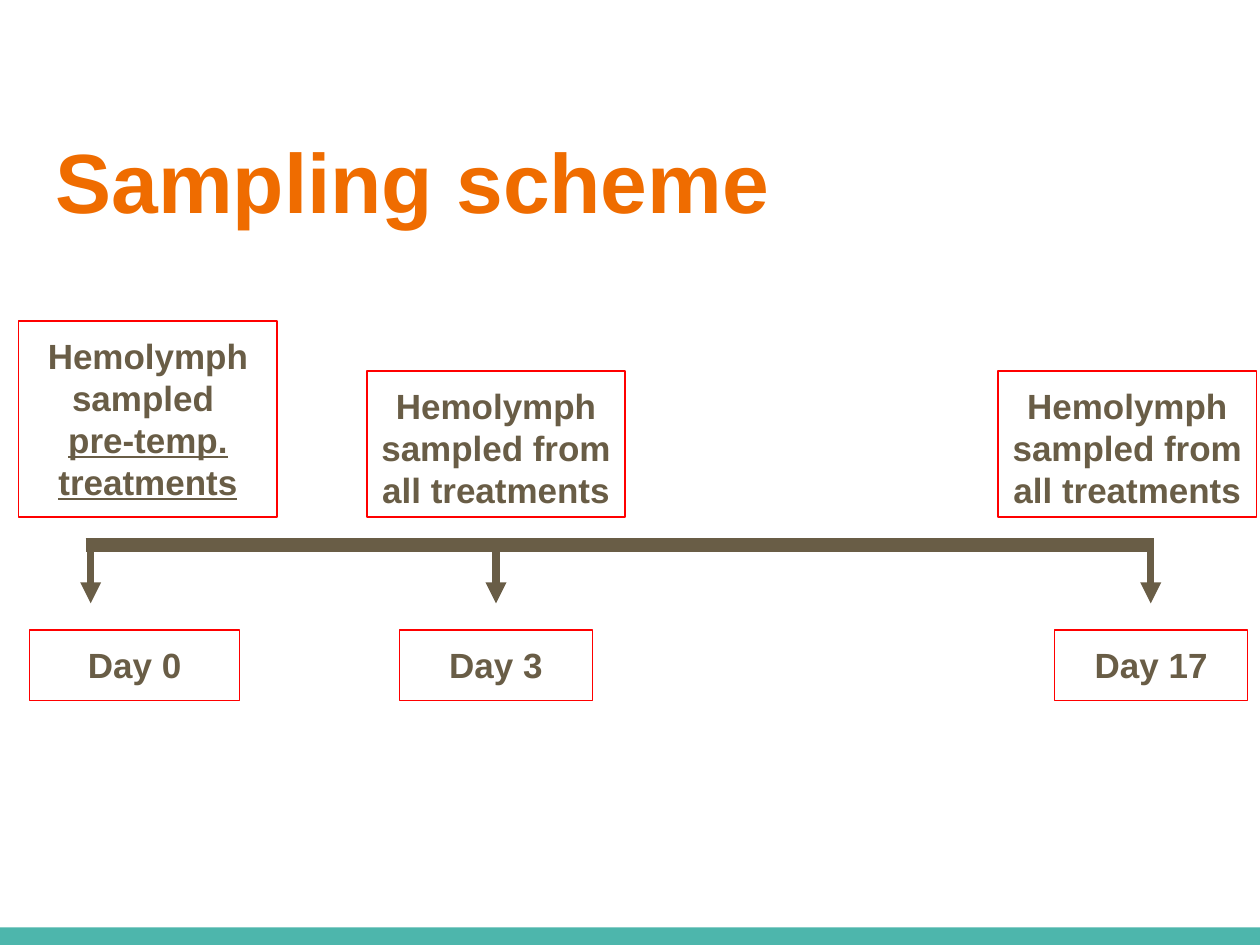
import pptx
import pptx.dml.color
import pptx.enum.shapes
import pptx.enum.text
import pptx.oxml.ns
import pptx.util
from lxml import etree

WIDE = pptx.util.Inches(7.5)
HIGH = WIDE * 3 // 4
HUES = {"title": "EF6C00", "text": "695D46", "edge": "FF0000", "band": "4DB6AC"}
FLOOR, AXIS, TIP = 54.75, 57.65, 63.85
ALL = [("Hemolymph sampled from all treatments", False)]
FIRST = [("Hemolymph sampled ", False), ("pre-temp. treatments", True)]
STOPS = [
    {"day": "Day 0", "mark": 7.2, "tag": (2.35, 16.67), "note": (1.47, 20.8), "lines": FIRST},
    {"day": "Day 3", "mark": 39.37, "tag": (31.7, 15.33), "note": (29.1, 15.5), "lines": ALL},
    {"day": "Day 17", "mark": 91.33, "tag": (83.7, 15.33), "note": (79.2, 15.5), "lines": ALL},
]


def hue(name):
    """Return a named colour."""
    return pptx.dml.color.RGBColor.from_string(HUES[name])


def across(share):
    """Turn a percentage of the slide's width into a length."""
    return round(WIDE * share / 100)


def down(share):
    """Turn a percentage of the slide's height into a length."""
    return round(HIGH * share / 100)


def area(left, top, width, height):
    """Return a rectangle given in percentages as lengths."""
    return across(left), down(top), across(width), down(height)


def style(para, size, name):
    """Set the font of a paragraph."""
    font = para.font
    font.name, font.size, font.bold = "Arial", pptx.util.Pt(size), True
    font.color.rgb = hue(name)


def inset(frame):
    """Set the margins of a text frame and hang its text from the top."""
    side = pptx.util.Inches(0.07)
    frame.margin_left = frame.margin_right = frame.margin_bottom = side
    frame.margin_top = pptx.util.Inches(0.08)
    frame.vertical_anchor = pptx.enum.text.MSO_ANCHOR.TOP
    frame.word_wrap = True


def block(slide, place):
    """Add a plain rectangle."""
    shape = slide.shapes.add_shape(pptx.enum.shapes.MSO_SHAPE.RECTANGLE, *area(*place))
    shape.shadow.inherit = False
    return shape


def band(slide):
    """Add the strip along the foot of the slide."""
    shape = block(slide, (0, 98.13, 100, 1.87))
    shape.fill.solid()
    shape.fill.fore_color.rgb = hue("band")
    shape.line.fill.background()


def head(slide, words):
    """Place and format the title."""
    title = slide.shapes.title
    title.left, title.top, title.width, title.height = area(3.47, 12.27, 93.2, 10.31)
    inset(title.text_frame)
    title.text_frame.text = words
    para = title.text_frame.paragraphs[0]
    para.alignment = pptx.enum.text.PP_ALIGN.LEFT
    style(para, 36, "title")


def box(slide, place, lines):
    """Add an outlined box with one paragraph per line."""
    shape = block(slide, place)
    shape.fill.background()
    shape.line.color.rgb = hue("edge")
    shape.line.width = pptx.util.Pt(0.75)
    frame = shape.text_frame
    inset(frame)
    for rank, (words, under) in enumerate(lines):
        para = frame.add_paragraph() if rank else frame.paragraphs[0]
        para.text = words
        para.alignment = pptx.enum.text.PP_ALIGN.CENTER
        style(para, 15, "text")
        if under:
            para.font.underline = True


def rule(slide, start, end, width, arrow=False):
    """Add a straight line, with an arrowhead at its end if asked."""
    line = slide.shapes.add_connector(
        pptx.enum.shapes.MSO_CONNECTOR.STRAIGHT,
        across(start[0]), down(start[1]), across(end[0]), down(end[1]))
    line.line.color.rgb = hue("text")
    line.line.width = pptx.util.Pt(width)
    props = line._element.spPr
    if arrow:
        etree.SubElement(props.find(pptx.oxml.ns.qn("a:ln")),
                         pptx.oxml.ns.qn("a:tailEnd"), type="triangle")
    etree.SubElement(props, pptx.oxml.ns.qn("a:effectLst"))


def main():
    """Build the slide and save it."""
    deck = pptx.Presentation()
    deck.slide_width, deck.slide_height = WIDE, HIGH
    slide = deck.slides.add_slide(deck.slide_layouts[5])
    band(slide)
    head(slide, "Sampling scheme")
    rule(slide, (6.8, AXIS), (91.6, AXIS), 6)
    for stop in STOPS:
        rule(slide, (stop["mark"], AXIS), (stop["mark"], TIP), 3, True)
        left, width = stop["tag"]
        box(slide, (left, 66.67, width, 7.47), [(stop["day"], False)])
        left, height = stop["note"]
        box(slide, (left, FLOOR - height, 20.53, height), stop["lines"])
    deck.save("out.pptx")


if __name__ == "__main__":
    main()
